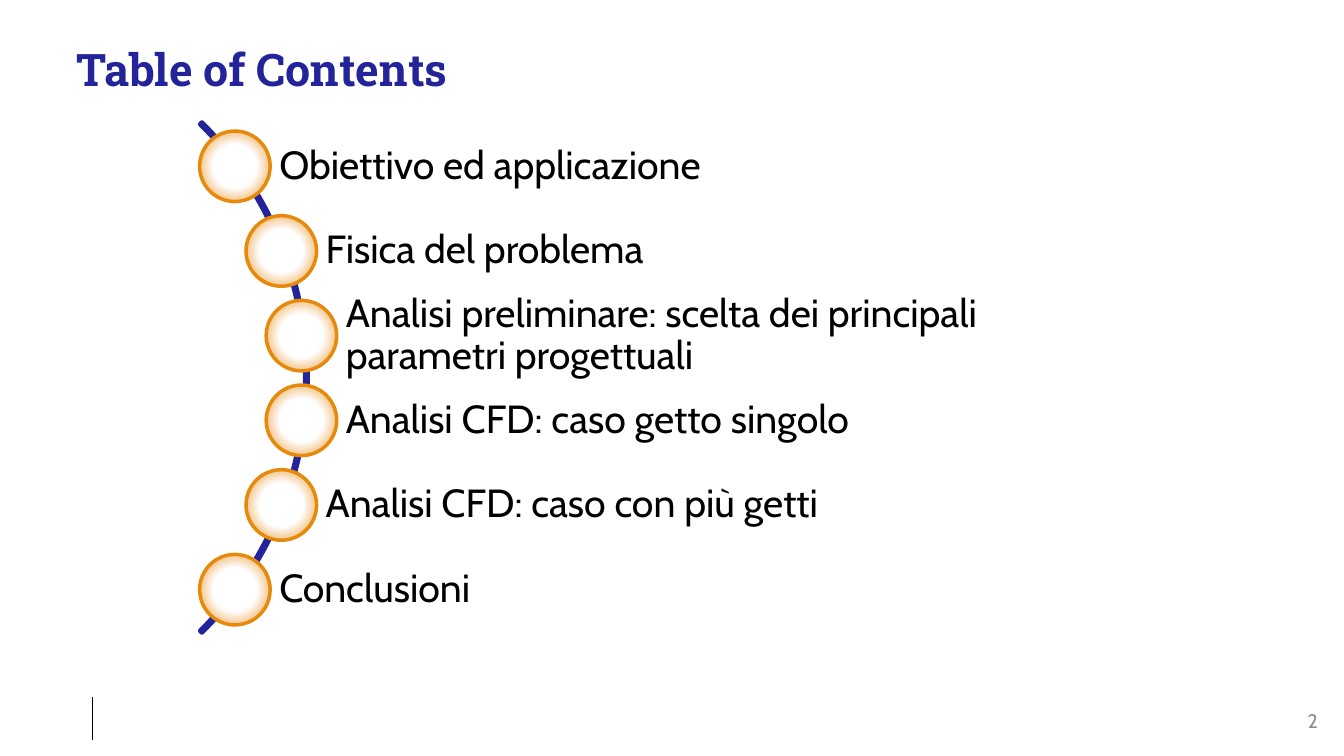
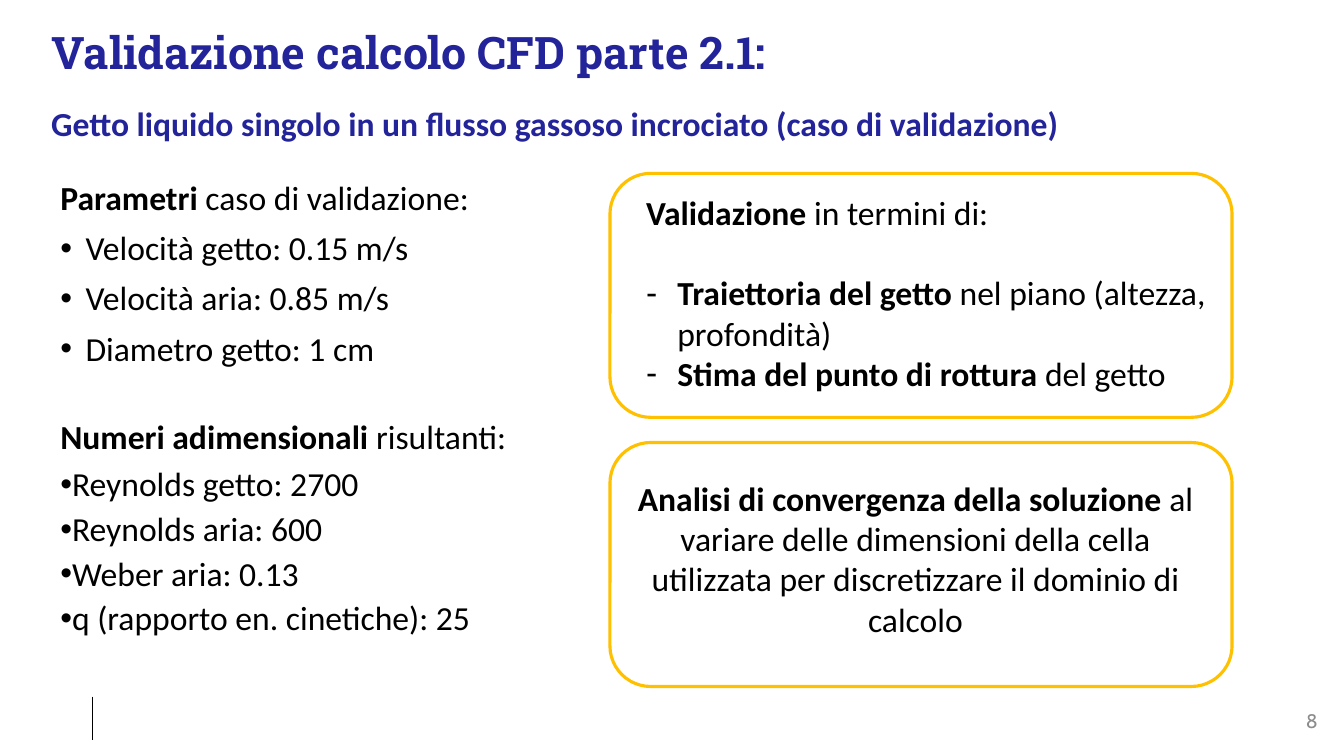
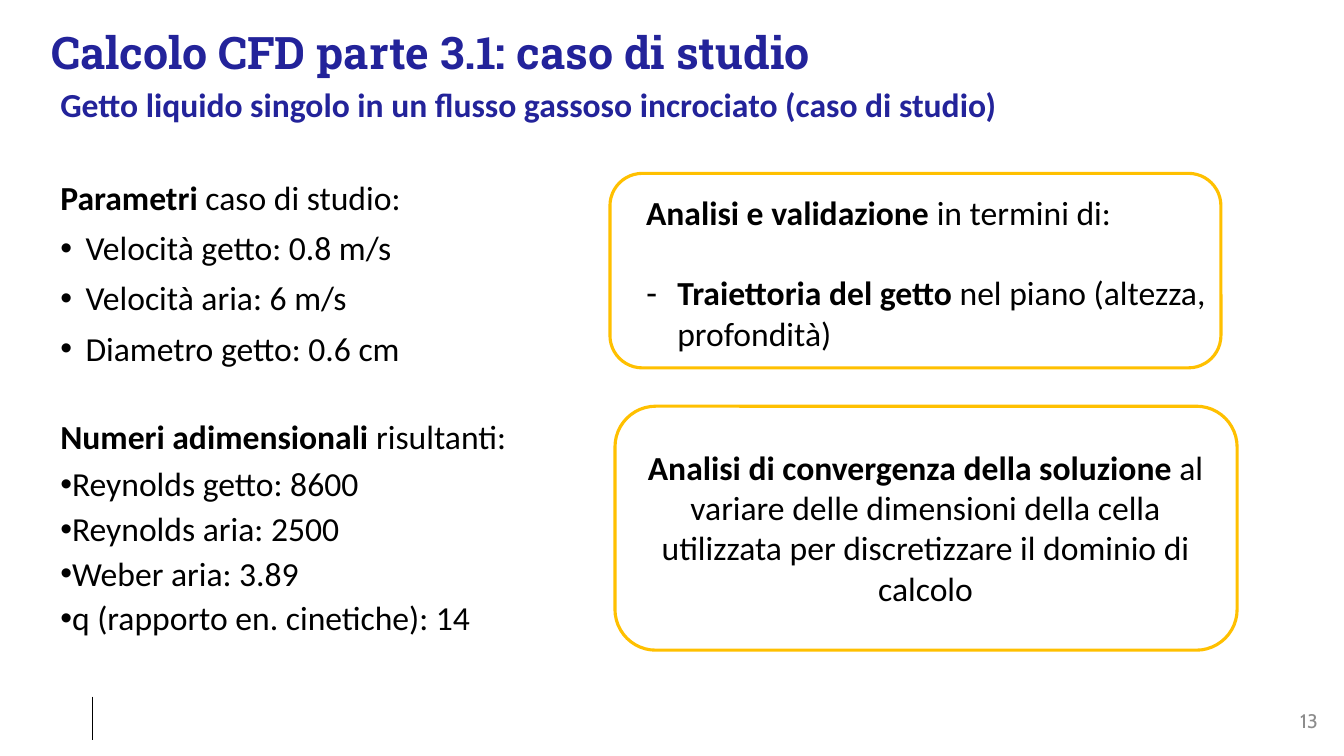
import math
import pptx
import pptx.util
import pptx.dml.color
import pptx.enum.shapes
import pptx.enum.text
import pptx.oxml.ns
from lxml import etree

Inches, Pt = pptx.util.Inches, pptx.util.Pt
qn = pptx.oxml.ns.qn
SHAPE = pptx.enum.shapes.MSO_SHAPE
ALIGN = pptx.enum.text.PP_ALIGN
ANCHOR = pptx.enum.text.MSO_ANCHOR

# Shared look
HEX = {"navy": "23239A", "black": "000000", "grey": "8C8C8C",
       "white": "FFFFFF", "orange": "E7890B", "gold": "FFC000"}
HEAD, BODY, TOC = "Roboto Slab", "Calibri", "Cabin"

# Content: a paragraph is (bold part, plain part)
TOPICS = [
    "Obiettivo ed applicazione",
    "Fisica del problema",
    "Analisi preliminare: scelta dei principali parametri progettuali",
    "Analisi CFD: caso getto singolo",
    "Analisi CFD: caso con più getti",
    "Conclusioni",
]
PATH = ("Traiettoria del getto ", "nel piano (altezza, profondità)")
BREAK = ("Stima del punto di rottura ", "del getto")
MESH = ("Analisi di convergenza della soluzione ",
        "al variare delle dimensioni della cella utilizzata "
        "per discretizzare il dominio di calcolo")
CASES = [
    {"page": 8, "title": "Validazione calcolo CFD parte 2.1:",
     "sub": "Getto liquido singolo in un flusso gassoso incrociato "
            "(caso di validazione)", "sub_at": (0.41, 0.97),
     "case": "caso di validazione:",
     "jet": ("0.15", "0.85", "1"), "nums": ("2700", "600", "0.13", "25"),
     "goal": "Validazione", "aims": [PATH, BREAK],
     "goal_box": (6.05, 1.72, 6.17, 2.42),
     "mesh_box": (6.05, 4.39, 6.17, 2.42), "mesh_at": (6.05, 4.69)},
    {"page": 13, "title": "Calcolo CFD parte 3.1: caso di studio",
     "sub": "Getto liquido singolo in un flusso gassoso incrociato "
            "(caso di studio)", "sub_at": (0.5, 0.78),
     "case": "caso di studio:",
     "jet": ("0.8", "6", "0.6"), "nums": ("8600", "2500", "3.89", "14"),
     "goal": "Analisi e validazione", "aims": [PATH],
     "goal_box": (6.05, 1.72, 6.06, 1.93),
     "mesh_box": (6.1, 4.03, 6.17, 2.42), "mesh_at": (6.15, 4.38)},
]
JET = ["Velocità getto: {} m/s", "Velocità aria: {} m/s",
       "Diametro getto: {} cm"]
NUMS = ["Reynolds getto: {}", "Reynolds aria: {}", "Weber aria: {}",
        "q (rapporto en. cinetiche): {}"]


def rgb(name):
    return pptx.dml.color.RGBColor.from_string(HEX[name])


def place(box):
    return [Inches(round(v, 2)) for v in box]


def style(run, size, face, color, bold=False):
    run.font.size, run.font.name, run.font.bold = Pt(size), face, bold
    run.font.color.rgb = rgb(color)


def bullet(para, mark, left, hang):
    props = para._p.get_or_add_pPr()
    props.set("marL", str(Inches(left)))
    props.set("indent", str(Inches(hang)))
    etree.SubElement(props, qn("a:buFont")).set("typeface", "Arial")
    etree.SubElement(props, qn("a:buChar")).set("char", mark)


def write(slide, box, paras, size=24, face=BODY, color="black", mark=None,
          ind=(0, 0), align=ALIGN.LEFT, line=None, before=0, after=0,
          mid=False, left=0.1):
    """Text box; with a mark, every paragraph is a bullet unless it is a
    heading, given as (bold, plain, True)."""
    frame = slide.shapes.add_textbox(*place(box)).text_frame
    frame.word_wrap = True
    frame.margin_left = Inches(left)
    if mid:
        frame.vertical_anchor = ANCHOR.MIDDLE
    for i, (bold, plain, *head) in enumerate(paras):
        para = frame.paragraphs[0] if i == 0 else frame.add_paragraph()
        para.alignment = align
        para.line_spacing = line
        para.space_after = Pt(after)
        if i:
            para.space_before = Pt(before)
        if mark and not head:
            bullet(para, mark, *ind)
        for text, heavy in ((bold, True), (plain, False)):
            if text:
                run = para.add_run()
                run.text = text
                style(run, size, face, color, heavy)
    return frame


def outline(slide, kind, box, color, width):
    shape = slide.shapes.add_shape(kind, *place(box))
    shape.shadow.inherit = False
    shape.fill.background()
    shape.line.color.rgb = rgb(color)
    shape.line.width = Pt(width)
    return shape


def glow(shape):
    """Round gradient, white in the middle and orange at the rim."""
    shape.fill.gradient()
    for stop, pos, color in zip(shape.fill.gradient_stops, (0.44, 1),
                                ("white", "orange")):
        stop.position = pos
        stop.color.rgb = rgb(color)
    grad = shape._element.spPr.find(qn("a:gradFill"))
    grad.remove(grad.find(qn("a:lin")))
    ring = etree.SubElement(grad, qn("a:path"), path="circle")
    etree.SubElement(ring, qn("a:fillToRect"),
                     l="50000", t="50000", r="50000", b="50000")


def start(deck, title, box, page):
    """Slide with title, footer rule and page number."""
    slide = deck.slides.add_slide(deck.slide_layouts[5])
    head = slide.shapes.title
    head.left, head.top, head.width, head.height = place(box)
    frame = head.text_frame
    frame.text = title
    frame.auto_size = pptx.enum.text.MSO_AUTO_SIZE.NONE
    frame.vertical_anchor = ANCHOR.MIDDLE
    para = frame.paragraphs[0]
    para.alignment, para.line_spacing = ALIGN.LEFT, 0.9
    style(para.runs[0], 32, HEAD, "navy", True)
    rule = slide.shapes.add_connector(
        pptx.enum.shapes.MSO_CONNECTOR.STRAIGHT,
        *place((0.92, 6.91, 0.92, 7.34)))
    rule.line.color.rgb = rgb("black")
    rule.line.width = Pt(1)
    etree.SubElement(rule._element.spPr, qn("a:effectLst"))
    write(slide, (12.61, 6.95, 0.56, 0.4), [("", str(page))], 14, TOC,
          "grey", align=ALIGN.RIGHT, mid=True)
    return slide


def contents(deck):
    slide = start(deck, "Table of Contents", (0.66, 0.3, 8.56, 0.82), 2)
    # Arc from -45 to 45 degrees
    mid_x, mid_y, size = -0.52, 3.75, 7.15
    arc = outline(slide, SHAPE.BLOCK_ARC,
                  (mid_x - size / 2, mid_y - size / 2, size, size),
                  "navy", 3.5)
    for i, value in enumerate((189, 27, 0.003)):
        arc.adjustments[i] = value
    # Dots on the arc, evenly spaced in height
    step, reach, dot, tall, right = 0.84, 3.54, 0.7, 0.56, 11.3
    for i, topic in enumerate(TOPICS):
        rise = (i - (len(TOPICS) - 1) / 2) * step
        x = mid_x + math.sqrt(reach ** 2 - rise ** 2)
        y = mid_y + rise
        write(slide, (x, y - tall / 2, right - x, tall), [("", topic)], 28,
              TOC, line=0.9, mid=True, left=0.44)
        glow(outline(slide, SHAPE.OVAL,
                     (x - dot / 2, y - dot / 2, dot, dot), "orange", 2.5))


def study(deck, case):
    slide = start(deck, case["title"], (0.41, 0.2, 12.77, 0.7), case["page"])
    write(slide, (*case["sub_at"], 10.5, 0.5), [(case["sub"], "")],
          color="navy")
    # Left column: parameters and resulting numbers
    jet = [("", t.format(v)) for t, v in zip(JET, case["jet"])]
    write(slide, (0.5, 1.75, 4.31, 2.5),
          [("Parametri ", case["case"], True)] + jet,
          mark="•", ind=(0.25, -0.25), line=0.9, before=10)
    write(slide, (0.5, 4.08, 5, 0.5),
          [("Numeri adimensionali ", "risultanti:")])
    write(slide, (0.5, 4.59, 4.62, 2.78),
          [("", t.format(v)) for t, v in zip(NUMS, case["nums"])],
          mark="•", ind=(0, -0.25), line=0.9, after=6)
    # Right column: framed goals and mesh study
    for key in ("goal_box", "mesh_box"):
        outline(slide, SHAPE.ROUNDED_RECTANGLE, case[key], "gold", 2.25)
    goal = write(slide, (6.31, 1.85, 6.08, 1.72),
                 [(case["goal"], " in termini di:", True)] + case["aims"],
                 mark="-", ind=(0.31, -0.31))
    goal.paragraphs[1].space_before = Pt(29)
    write(slide, (*case["mesh_at"], 6.06, 1.72), [MESH], align=ALIGN.CENTER)


def main():
    deck = pptx.Presentation()
    deck.slide_width, deck.slide_height = Inches(13.33), Inches(7.5)
    contents(deck)
    for case in CASES:
        study(deck, case)
    deck.save("out.pptx")


if __name__ == "__main__":
    main()
